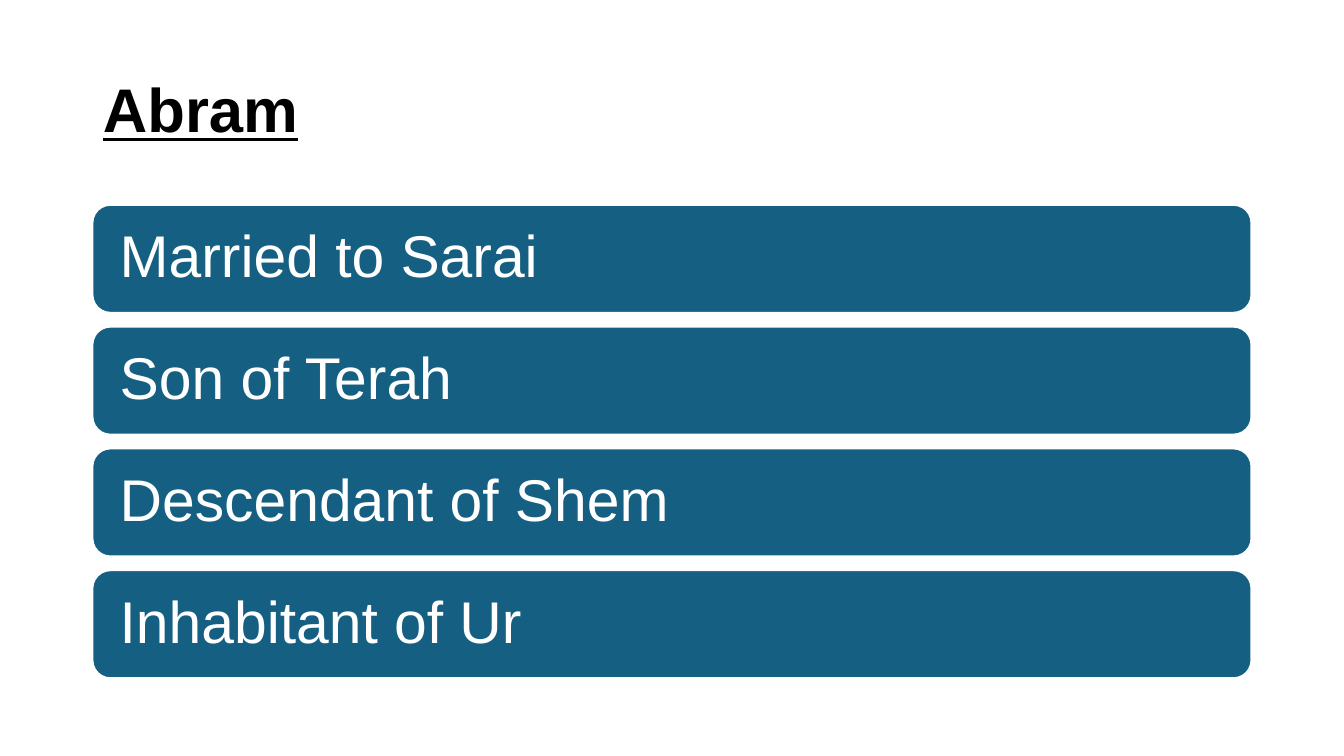
from pptx import Presentation
from pptx.dml.color import RGBColor
from pptx.enum.shapes import MSO_SHAPE
from pptx.enum.text import MSO_ANCHOR, PP_ALIGN
from pptx.util import Pt

EMU_PER_PX = 9525
FACTS = ["Married to Sarai", "Son of Terah", "Descendant of Shem", "Inhabitant of Ur"]
HEADING_FONT = {"name": "Arial", "size": Pt(44), "bold": True, "underline": True}
FACT_FONT = {"name": "Arial", "size": Pt(42)}


def px(length):
    """Turn whole px into EMU."""
    return length * EMU_PER_PX


def colour(hex_value):
    """Turn a hex string into a colour."""
    return RGBColor.from_string(hex_value)


def set_all(target, values):
    """Set each attribute of the target from a dict."""
    for attribute, value in values.items():
        setattr(target, attribute, value)


def write(holder, wording, font_values, hex_value, inset):
    """Write one left-aligned, vertically centred line of text."""
    frame = holder.text_frame
    frame.text = wording
    set_all(frame, {
        "word_wrap": True, "vertical_anchor": MSO_ANCHOR.MIDDLE,
        "margin_left": px(inset), "margin_right": px(inset),
        "margin_top": px(5), "margin_bottom": px(5),
    })
    line = frame.paragraphs[0]
    set_all(line, {"alignment": PP_ALIGN.LEFT, "line_spacing": 0.9})
    set_all(line.font, font_values)
    line.font.color.rgb = colour(hex_value)


def add_heading(slide, left, top, width, height):
    """Place the title in its box."""
    heading = slide.shapes.title
    set_all(heading, {"left": px(left), "top": px(top),
                      "width": px(width), "height": px(height)})
    write(heading, "Abram", HEADING_FONT, "000000", 10)


def add_facts(slide, left, top, width, height, gap=13):
    """Stack one rounded bar per fact, filling the box with equal gaps."""
    bar_height = (height - gap * (len(FACTS) - 1)) // len(FACTS)
    for row, fact in enumerate(FACTS):
        bar_top = top + row * (bar_height + gap)
        bar = slide.shapes.add_shape(MSO_SHAPE.ROUNDED_RECTANGLE, px(left), px(bar_top),
                                     px(width), px(bar_height))
        bar.shadow.inherit = False
        bar.fill.solid()
        bar.fill.fore_color.rgb = colour("156082")
        bar.line.color.rgb = colour("FFFFFF")
        bar.line.width = Pt(1.5)
        write(bar, fact, FACT_FONT, "FFFFFF", 21)


def main():
    """Build and save the slide."""
    deck = Presentation()
    set_all(deck, {"slide_width": px(1280), "slide_height": px(720)})
    slide = deck.slides.add_slide(deck.slide_layouts[5])
    add_heading(slide, 88, 38, 1104, 139)
    add_facts(slide, 88, 195, 1104, 451)
    deck.save("out.pptx")


if __name__ == "__main__":
    main()
